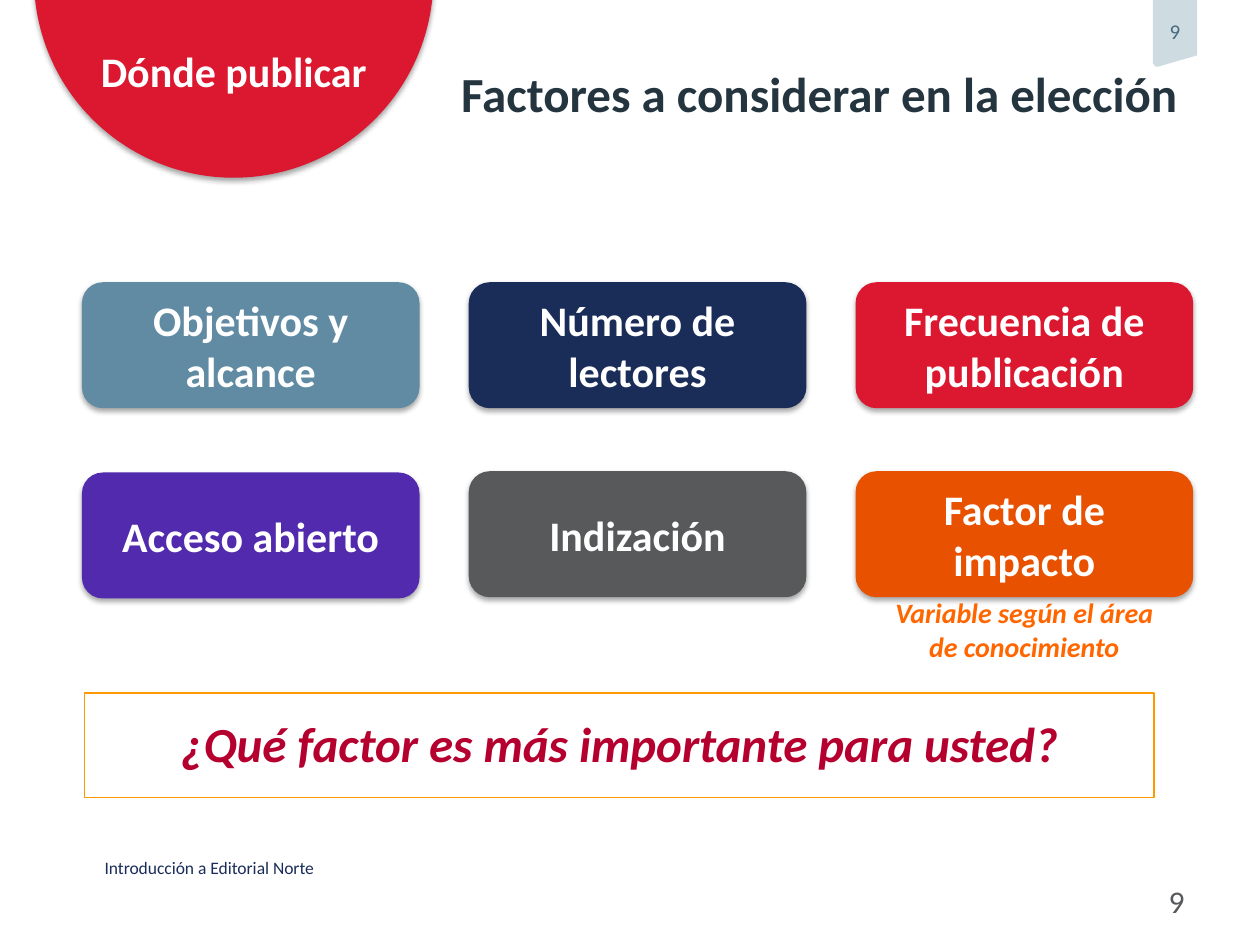
from dataclasses import dataclass

from lxml.etree import SubElement
from pptx import Presentation
from pptx.dml.color import RGBColor
from pptx.enum.shapes import MSO_SHAPE
from pptx.enum.text import MSO_ANCHOR, MSO_AUTO_SIZE, PP_ALIGN
from pptx.oxml.ns import qn
from pptx.shapes.autoshape import Shape
from pptx.slide import Slide
from pptx.util import Inches, Pt

COLORS = {
    "white": "FFFFFF", "navy": "1A2D59", "red": "DB1830", "steel": "608BA3",
    "purple": "512AAD", "gray": "58595B", "orange": "E85100",
    "note": "FF6600", "border": "FF9900", "crimson": "B5002F",
    "title": "24353F", "tag": "CEDBE0", "tag_text": "486A7E",
}
FONT = "Calibri"
CARD_WIDTH, CARD_HEIGHT = 2.68, 1
CARD_LEFT, CARD_TOP = 0.65, 2.24
COLUMN_STEP, ROW_STEP = 3.07, 1.5


@dataclass
class Factor:
    text: str
    color: str
    column: int
    row: int
    drop: float = 0


FACTORS = [
    Factor("Objetivos y alcance", "steel", 0, 0),
    Factor("Número de lectores", "navy", 1, 0),
    Factor("Frecuencia de publicación", "red", 2, 0),
    Factor("Acceso abierto", "purple", 0, 1, drop=0.01),
    Factor("Indización", "gray", 1, 1),
    Factor("Factor de impacto", "orange", 2, 1),
]


def rgb(name: str) -> RGBColor:
    return RGBColor.from_string(COLORS[name])


def place(shape: Shape, left: float, top: float, width: float, height: float) -> None:
    shape.left, shape.top = Inches(left), Inches(top)
    shape.width, shape.height = Inches(width), Inches(height)


def write(shape: Shape, text: str, *, size: float, color: str, bold: bool = False,
          italic: bool = False, align: PP_ALIGN = PP_ALIGN.LEFT,
          anchor: MSO_ANCHOR = MSO_ANCHOR.TOP, wrap: bool = True,
          insets: tuple[float, float, float, float] = (0.1, 0.05, 0.1, 0.05)) -> None:
    """Fill a shape with one formatted paragraph; insets run left, top, right, bottom."""
    frame = shape.text_frame
    frame.text = text
    frame.auto_size = MSO_AUTO_SIZE.NONE
    frame.word_wrap = wrap
    frame.vertical_anchor = anchor
    (frame.margin_left, frame.margin_top,
     frame.margin_right, frame.margin_bottom) = map(Inches, insets)
    paragraph = frame.paragraphs[0]
    paragraph.alignment = align
    paragraph.space_before = Pt(0)
    font = paragraph.runs[0].font
    font.name, font.size, font.bold, font.italic = FONT, Pt(size), bold, italic
    font.color.rgb = rgb(color)


def add_label(slide: Slide, text: str, left: float, top: float,
              width: float, height: float, **text_format) -> None:
    box = slide.shapes.add_textbox(*map(Inches, (left, top, width, height)))
    write(box, text, **text_format)


def paint(shape: Shape, color: str) -> None:
    shape.shadow.inherit = False
    shape.fill.solid()
    shape.fill.fore_color.rgb = rgb(color)
    shape.line.fill.background()


def add_soft_shadow(shape: Shape) -> None:
    effects = shape.element.spPr.find(qn("a:effectLst"))
    shadow = SubElement(effects, qn("a:outerShdw"), blurRad=str(Pt(3.1)),
                        dist=str(Pt(1.8)), dir="5400000", rotWithShape="0")
    color = SubElement(shadow, qn("a:srgbClr"), val="000000")
    SubElement(color, qn("a:alpha"), val="35000")


def add_page_tag(slide: Slide) -> None:
    builder = slide.shapes.build_freeform(Inches(9.15), 0)
    outline = [(9.5, 0), (9.5, 0.44), (9.19, 0.53), (9.17, 0.53), (9.15, 0.5)]
    builder.add_line_segments([(Inches(x), Inches(y)) for x, y in outline], close=True)
    tag = builder.convert_to_shape()
    paint(tag, "tag")
    write(tag, "9", size=12, color="tag_text", align=PP_ALIGN.CENTER,
          anchor=MSO_ANCHOR.MIDDLE, wrap=False, insets=(0, 0, 0, 0.04))


def add_section_badge(slide: Slide) -> None:
    badge = slide.shapes.add_shape(
        MSO_SHAPE.CHORD, *map(Inches, (0.27, -1.76, 3.17, 3.17)))
    badge.rotation = 292
    paint(badge, "red")
    add_soft_shadow(badge)
    add_label(slide, "Dónde publicar", 0.51, 0.31, 2.69, 0.5, size=24,
              color="white", bold=True, align=PP_ALIGN.CENTER)


def add_factor_card(slide: Slide, factor: Factor) -> None:
    left = CARD_LEFT + factor.column * COLUMN_STEP
    top = CARD_TOP + factor.row * ROW_STEP + factor.drop
    card = slide.shapes.add_shape(
        MSO_SHAPE.ROUNDED_RECTANGLE,
        *map(Inches, (left, top, CARD_WIDTH, CARD_HEIGHT)))
    paint(card, factor.color)
    add_soft_shadow(card)
    write(card, factor.text, size=24, color="white", bold=True,
          align=PP_ALIGN.CENTER, anchor=MSO_ANCHOR.MIDDLE)


def fill_question(question: Shape) -> None:
    place(question, 0.67, 5.5, 8.49, 0.83)
    question.line.color.rgb = rgb("border")
    question.line.width = Pt(1)
    write(question, "¿Qué factor es más importante para usted?", size=28,
          color="crimson", bold=True, italic=True, align=PP_ALIGN.CENTER)
    paragraph = question.text_frame.paragraphs[0]
    paragraph.line_spacing = 1.25
    paragraph.space_after = Pt(6)
    properties = paragraph._p.get_or_add_pPr()
    properties.set("marL", "0")
    properties.set("indent", "0")
    SubElement(properties, qn("a:buNone"))


def main() -> None:
    presentation = Presentation()
    presentation.slide_width, presentation.slide_height = Inches(10), Inches(7.5)
    slide = presentation.slides.add_slide(presentation.slide_layouts[1])

    add_page_tag(slide)
    add_section_badge(slide)
    title = slide.shapes.title
    place(title, 3.56, 0.27, 6.42, 0.93)
    write(title, "Factores a considerar en la elección", size=28, color="title",
          bold=True, anchor=MSO_ANCHOR.MIDDLE)
    for factor in FACTORS:
        add_factor_card(slide, factor)
    add_label(slide, "Variable según el área de conocimiento", 6.95, 4.68, 2.36, 0.64,
              size=16, color="note", bold=True, italic=True, align=PP_ALIGN.CENTER)
    fill_question(slide.placeholders[1])
    add_label(slide, "Introducción a Editorial Norte", 0.83, 6.8, 3.55, 0.17, size=10,
              color="navy", anchor=MSO_ANCHOR.MIDDLE, insets=(0, 0, 0, 0))
    add_label(slide, "9", 7.17, 6.95, 2.33, 0.4, size=18, color="gray",
              align=PP_ALIGN.RIGHT)
    presentation.save("out.pptx")


if __name__ == "__main__":
    main()
